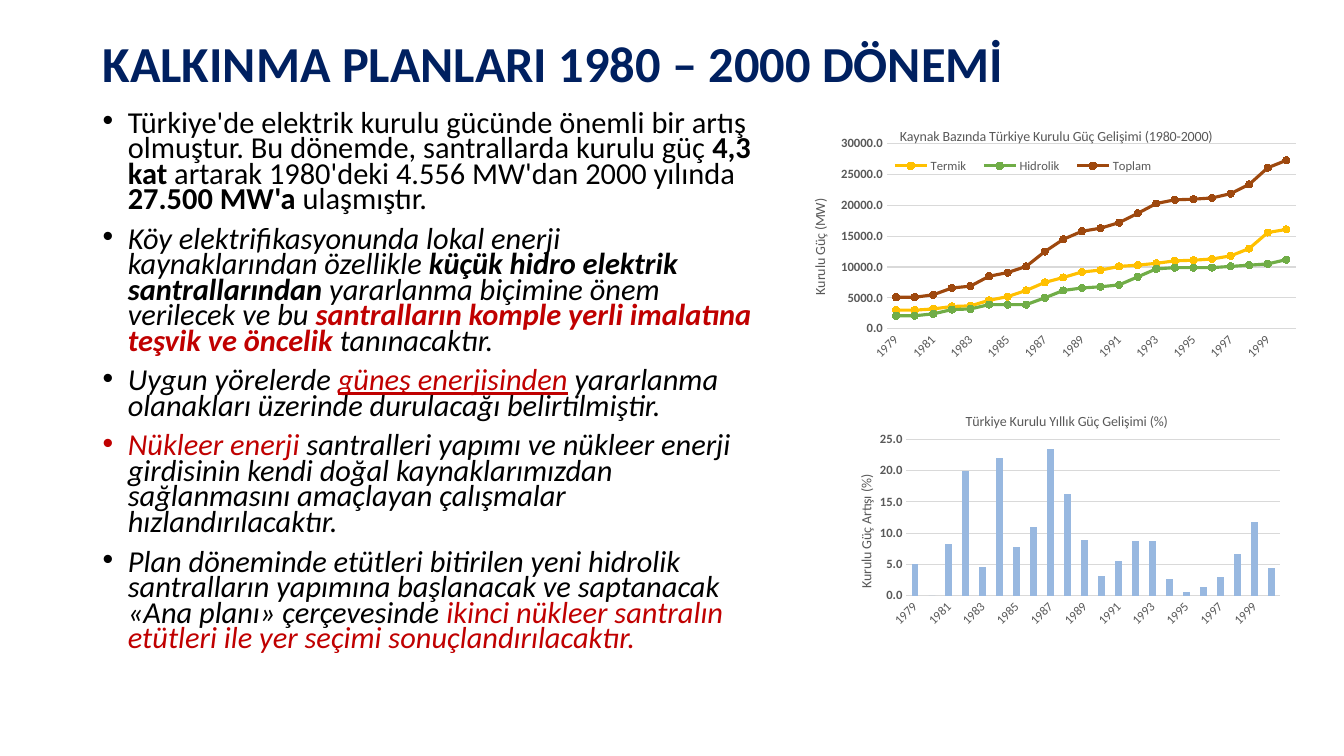
from dataclasses import dataclass

from lxml import etree
from pptx import Presentation
from pptx.chart.axis import CategoryAxis, ValueAxis
from pptx.chart.chart import Chart
from pptx.chart.data import CategoryChartData
from pptx.dml.color import RGBColor
from pptx.enum.chart import XL_CHART_TYPE, XL_LEGEND_POSITION, XL_MARKER_STYLE, XL_TICK_MARK
from pptx.enum.text import MSO_ANCHOR
from pptx.oxml.ns import qn
from pptx.slide import Slide
from pptx.text.text import Font, TextFrame
from pptx.util import Pt

LINE = XL_CHART_TYPE.LINE_MARKERS
COLUMN = XL_CHART_TYPE.COLUMN_CLUSTERED
TOP = XL_LEGEND_POSITION.TOP
CIRCLE = XL_MARKER_STYLE.CIRCLE
NO_TICK = XL_TICK_MARK.NONE
MIDDLE = MSO_ANCHOR.MIDDLE

PX = 9144
FONT = "Calibri"
NAVY = RGBColor(0x00, 0x20, 0x60)
BLACK = RGBColor(0x00, 0x00, 0x00)
RED = RGBColor(0xC0, 0x00, 0x00)
GRAY = RGBColor(0x59, 0x59, 0x59)
GRID = RGBColor(0xD9, 0xD9, 0xD9)
GOLD = RGBColor(0xFF, 0xC0, 0x00)
GREEN = RGBColor(0x70, 0xAD, 0x47)
BROWN = RGBColor(0x9E, 0x48, 0x0E)
BLUE = RGBColor(0x98, 0xB8, 0xE0)

Box = tuple[int, int, int, int]


@dataclass(frozen=True)
class Run:
    """A stretch of text in one style."""
    text: str
    italic: bool = True
    bold: bool = False
    color: RGBColor = BLACK
    underline: bool = False


@dataclass(frozen=True)
class Series:
    """A named, coloured row of chart values."""
    name: str
    color: RGBColor
    values: tuple[float, ...]


@dataclass(frozen=True)
class ChartSpec:
    """A chart with its scale and the relative places of its parts."""
    kind: XL_CHART_TYPE
    box: Box
    title: str
    title_at: tuple[float, ...]
    axis_title: str
    axis_title_at: tuple[float, ...]
    plot_at: tuple[float, ...]
    maximum: int
    step: int
    series: tuple[Series, ...]
    legend_at: tuple[float, ...] = ()


TITLE = "KALKINMA PLANLARI 1980 – 2000 DÖNEMİ"
BULLETS = (
    (Run("Türkiye'de elektrik kurulu gücünde önemli bir artış olmuştur. "
         "Bu dönemde, santrallarda kurulu güç ", False),
     Run("4,3 kat", False, True),
     Run(" artarak 1980'deki 4.556 MW'dan 2000 yılında ", False),
     Run("27.500 MW'a", False, True),
     Run(" ulaşmıştır.", False)),
    (Run("Köy elektrifikasyonunda lokal enerji kaynaklarından özellikle "),
     Run("küçük hidro elektrik santrallarından ", bold=True),
     Run("yararlanma biçimine önem verilecek ve bu "),
     Run("santralların komple yerli imalatına teşvik ve öncelik ", bold=True, color=RED),
     Run("tanınacaktır.")),
    (Run("Uygun yörelerde "),
     Run("güneş enerjisinden", color=RED, underline=True),
     Run(" yararlanma olanakları üzerinde durulacağı belirtilmiştir.")),
    (Run("Nükleer enerji ", color=RED),
     Run("santralleri yapımı ve nükleer enerji girdisinin kendi doğal kaynaklarımızdan "
         "sağlanmasını amaçlayan çalışmalar hızlandırılacaktır.")),
    (Run("Plan döneminde etütleri bitirilen yeni hidrolik santralların yapımına başlanacak "
         "ve saptanacak «Ana planı» çerçevesinde "),
     Run("ikinci nükleer santralın etütleri ile yer seçimi sonuçlandırılacaktır.", color=RED)),
)
YEARS = [str(year) for year in range(1979, 2001)]
CHARTS = (
    ChartSpec(
        LINE, (786, 107, 520, 274),
        "Kaynak Bazında Türkiye Kurulu Güç Gelişimi (1980-2000)", (0.2, 0.06),
        "Kurulu Güç (MW)", (0.03, 0.32), (0.18, 0.13, 0.78, 0.67), 30000, 5000,
        (Series("Termik", GOLD, (
            3000, 3000, 3200, 3600, 3700, 4600, 5200, 6200, 7500, 8300, 9200,
            9500, 10100, 10300, 10600, 11000, 11100, 11300, 11800, 13000, 15600, 16100)),
         Series("Hidrolik", GREEN, (
             2100, 2100, 2400, 3100, 3200, 3900, 3900, 3900, 5000, 6200, 6600,
             6800, 7100, 8400, 9700, 9900, 9900, 9900, 10100, 10300, 10500, 11200)),
         Series("Toplam", BROWN, (
             5100, 5100, 5500, 6600, 6900, 8500, 9100, 10100, 12500, 14500, 15800,
             16300, 17200, 18700, 20300, 20900, 21000, 21200, 21900, 23400, 26100, 27300))),
        (0.17, 0.17, 0.54, 0.08)),
    ChartSpec(
        COLUMN, (824, 391, 469, 250),
        "Türkiye Kurulu Yıllık Güç Gelişimi (%)", (0.28, 0.06),
        "Kurulu Güç Artışı (%)", (0.05, 0.31), (0.16, 0.18, 0.79, 0.62), 25, 5,
        (Series("Series 1", BLUE, (
            5.1, 0, 8.2, 19.9, 4.5, 22, 7.8, 10.9, 23.5, 16.2, 8.9,
            3.2, 5.5, 8.8, 8.7, 2.6, 0.5, 1.4, 3, 6.7, 11.8, 4.4)),)),
)


def style_font(font: Font, size: float, color: RGBColor, bold: bool = False) -> None:
    """Set the typeface, size, colour and weight of a font."""
    font.name, font.size, font.bold = FONT, Pt(size), bold
    font.color.rgb = color


def add_text_box(slide: Slide, box: Box) -> TextFrame:
    """Add a wrapping text box and return its frame."""
    tf = slide.shapes.add_textbox(*(v * PX for v in box)).text_frame
    tf.word_wrap = True
    return tf


def add_title(slide: Slide) -> None:
    """Add the slide heading."""
    tf = add_text_box(slide, (92, 40, 1150, 51))
    tf.vertical_anchor = MIDDLE
    tf.text = TITLE
    p = tf.paragraphs[0]
    p.line_spacing = 0.9
    style_font(p.runs[0].font, 36, NAVY, True)


def add_bullets(slide: Slide) -> None:
    """Add the bulleted text, each bullet in the colour of its first run."""
    tf = add_text_box(slide, (92, 107, 666, 590))
    for i, runs in enumerate(BULLETS):
        p = tf.add_paragraph() if i else tf.paragraphs[0]
        pPr = p._p.get_or_add_pPr()
        pPr.set("marL", str(25 * PX))
        pPr.set("indent", str(-25 * PX))
        clr = etree.SubElement(pPr, qn("a:buClr"))
        etree.SubElement(clr, qn("a:srgbClr"), val=str(runs[0].color))
        etree.SubElement(pPr, qn("a:buFont"), typeface="Arial")
        etree.SubElement(pPr, qn("a:buChar"), char="•")
        p.line_spacing = 0.7
        p.space_before = Pt(10 if i else 0)
        for run in runs:
            r = p.add_run()
            r.text = run.text
            style_font(r.font, 21.7, run.color, run.bold)
            r.font.italic, r.font.underline = run.italic, run.underline


def place(part: etree._Element, index: int, at: tuple[float, ...], inner: bool = False) -> None:
    """Give a chart part a manual layout as its child at the index."""
    for old in part.findall(qn("c:layout")):
        part.remove(old)
    layout = etree.Element(qn("c:layout"))
    part.insert(index, layout)
    manual = etree.SubElement(layout, qn("c:manualLayout"))
    if inner:
        etree.SubElement(manual, qn("c:layoutTarget"), val="inner")
    for mode in ("xMode", "yMode"):
        etree.SubElement(manual, qn(f"c:{mode}"), val="edge")
    for key, value in zip("xywh", at):
        etree.SubElement(manual, qn(f"c:{key}"), val=str(value))


def style_titled(part: Chart | ValueAxis, title: etree._Element, tf: TextFrame,
                 text: str, at: tuple[float, ...]) -> None:
    """Write and place the title of a chart or axis."""
    tf.text = text
    style_font(tf.paragraphs[0].runs[0].font, 10, GRAY)
    place(title, 1, at)


def style_axis(axis: CategoryAxis | ValueAxis, bold: bool) -> None:
    """Remove tick marks and set the label font."""
    axis.major_tick_mark = axis.minor_tick_mark = NO_TICK
    style_font(axis.tick_labels.font, 9, GRAY, bold)


def add_chart(slide: Slide, spec: ChartSpec) -> None:
    """Add a line or column chart."""
    data = CategoryChartData()
    data.categories = YEARS
    for series in spec.series:
        data.add_series(series.name, series.values)
    chart = slide.shapes.add_chart(spec.kind, *(v * PX for v in spec.box), data).chart
    style_font(chart.font, 10, BLACK)
    cat, val, plot = chart.category_axis, chart.value_axis, chart.plots[0]
    for part, head, text, at in ((chart, chart.chart_title, spec.title, spec.title_at),
                                 (val, val.axis_title, spec.axis_title, spec.axis_title_at)):
        style_titled(part, head._element, head.text_frame, text, at)
    place(chart._chartSpace.find(".//" + qn("c:plotArea")), 0, spec.plot_at, True)
    style_axis(cat, False)
    style_axis(val, True)
    for line in (cat.format.line, val.major_gridlines.format.line):
        line.color.rgb, line.width = GRID, Pt(0.75)
    cat._element.find(qn("c:txPr")).find(qn("a:bodyPr")).set("rot", "-2700000")
    skip = etree.Element(qn("c:tickLblSkip"), val="2")
    cat._element.find(qn("c:noMultiLvlLbl")).addprevious(skip)
    val.format.line.fill.background()
    val.minimum_scale, val.maximum_scale, val.major_unit = 0, spec.maximum, spec.step
    val.tick_labels.number_format = "0.0"
    val.tick_labels.number_format_is_linked = False
    plot.vary_by_categories = False
    chart.has_legend = bool(spec.legend_at)
    if spec.legend_at:
        chart.legend.position = TOP
        chart.legend.include_in_layout = False
        style_font(chart.legend.font, 9, GRAY)
        place(chart.legend._element, 1, spec.legend_at)
    if spec.kind == COLUMN:
        plot.gap_width = 150
    for s, series in zip(plot.series, spec.series):
        if spec.kind == COLUMN:
            fills = [s.format.fill]
        else:
            s.smooth = False
            s.format.line.color.rgb, s.format.line.width = series.color, Pt(2.25)
            s.marker.style, s.marker.size = CIRCLE, 5
            s.marker.format.line.color.rgb = series.color
            fills = [s.marker.format.fill]
        for fill in fills:
            fill.solid()
            fill.fore_color.rgb = series.color


def main() -> None:
    """Build and save the slide."""
    prs = Presentation()
    prs.slide_width, prs.slide_height = 1333 * PX, 750 * PX
    slide = prs.slides.add_slide(prs.slide_layouts[6])
    add_title(slide)
    add_bullets(slide)
    for spec in CHARTS:
        add_chart(slide, spec)
    prs.save("out.pptx")


if __name__ == "__main__":
    main()
